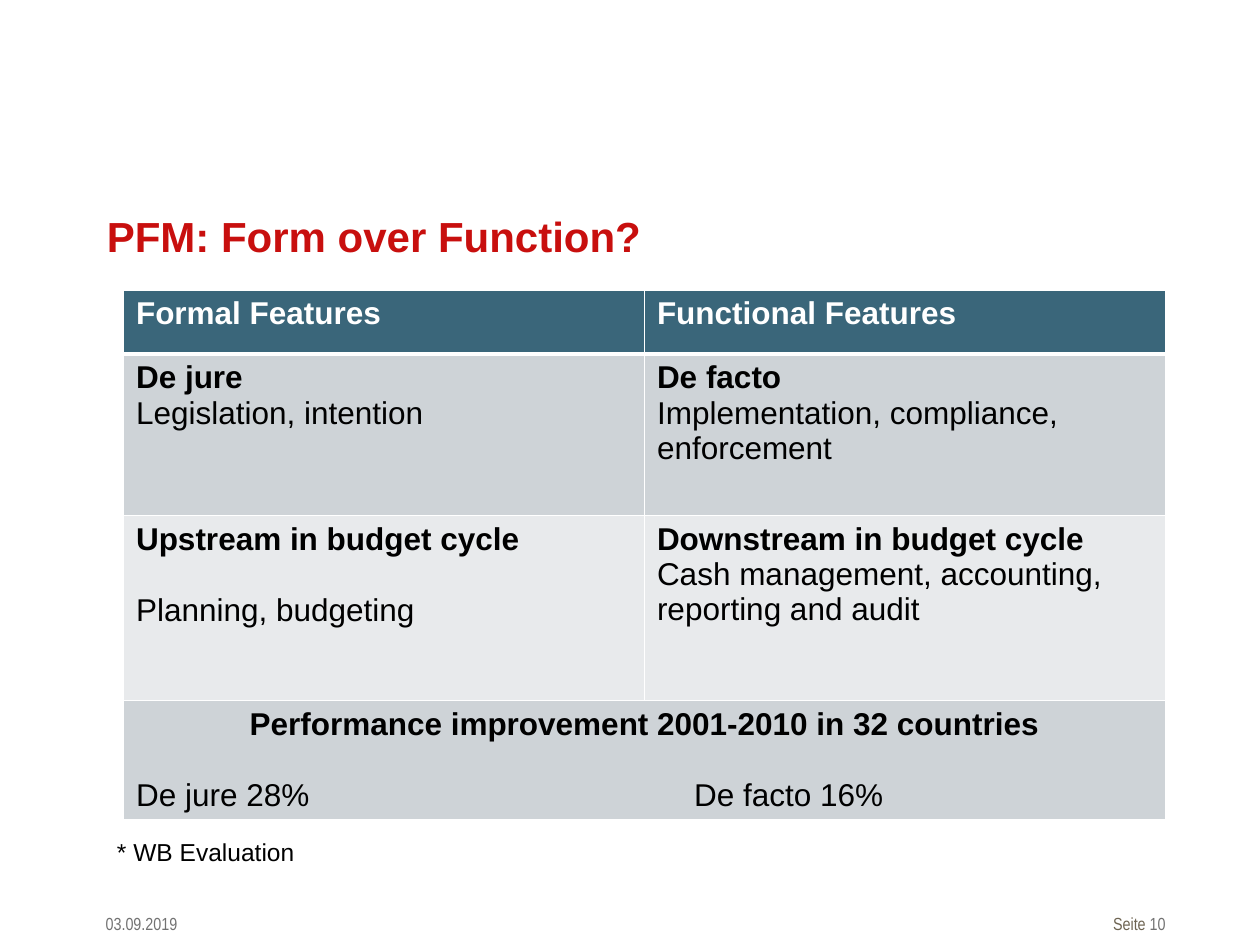
from pptx import Presentation
from pptx.util import Inches, Pt
from pptx.dml.color import RGBColor
from pptx.enum.text import PP_ALIGN as Align
from pptx.oxml import parse_xml
from pptx.oxml.ns import nsdecls

# Content: each cell is a list of (text, bold, space before in points)
HEAD, DARK, PALE = "3A667A", "CED3D7", "E8EAEC"
WHITE, BLACK, GREY = "FFFFFF", "000000", "727272"
GAP = 20.7  # one line of 18 pt text
ROWS = [
    (0.51, HEAD, WHITE, [
        [("Formal Features", True, 0)],
        [("Functional Features", True, 0)]]),
    (1.28, DARK, BLACK, [
        [("De jure", True, 0), ("Legislation, intention", False, 0)],
        [("De facto", True, 0),
         ("Implementation, compliance, enforcement", False, 0)]]),
    (1.47, PALE, BLACK, [
        [("Upstream in budget cycle", True, 0),
         ("Planning, budgeting", False, GAP)],
        [("Downstream in budget cycle", True, 0),
         ("Cash management, accounting, reporting and audit", False, 0)]]),
    (0.94, DARK, BLACK, [
        [("Performance improvement 2001-2010 in 32 countries", True, 0),
         ("De jure 28%\tDe facto 16%", False, GAP)]]),
]
# Text boxes: place, runs with colours, size, font, bold, alignment
BOXES = [
    ((0.75, 1.62, 8.5, 0.68), [("PFM: Form over Function?", "C80F0E")],
     24, "Arial", True, Align.LEFT),
    ((0.83, 6.59, 8.42, 0.68), [("* WB Evaluation", BLACK)],
     14, "Arial", False, Align.LEFT),
    ((0.74, 7.2, 1.42, 0.27), [("03.09.2019", GREY)],
     10, "Arial Narrow", False, Align.LEFT),
    ((8.24, 7.2, 1.01, 0.27), [("Seite ", "6E6452"), ("10", GREY)],
     10, "Arial Narrow", False, Align.RIGHT),
]


def color(code):
    return RGBColor.from_string(code)


def style(para, size, face, bold):
    font = para.font
    font.size, font.name, font.bold = Pt(size), face, bold


def add_box(slide, place, runs, size, face, bold, align):
    frame = slide.shapes.add_textbox(*map(Inches, place)).text_frame
    frame.word_wrap = True
    if align == Align.RIGHT:
        frame.margin_right = 0
    para = frame.paragraphs[0]
    para.alignment = align
    for text, code in runs:
        run = para.add_run()
        run.text = text
        run.font.color.rgb = color(code)
    style(para, size, face, bold)


def set_lines(cell, top, bottom):
    props = cell._tc.get_or_add_tcPr()
    sides = (("L", 1), ("R", 1), ("T", top), ("B", bottom))
    for i, (side, width) in enumerate(sides):
        props.insert(i, parse_xml(
            f'<a:ln{side} {nsdecls("a")} w="{Pt(width)}"><a:solidFill>'
            f'<a:srgbClr val="{WHITE}"/></a:solidFill></a:ln{side}>'))


def add_tab(para, pos):
    para._p.get_or_add_pPr().append(parse_xml(
        f'<a:tabLst {nsdecls("a")}><a:tab pos="{Inches(pos)}" algn="l"/>'
        '</a:tabLst>'))


def fill_cell(cell, lines, code):
    frame = cell.text_frame
    for i, (text, bold, gap) in enumerate(lines):
        para = frame.add_paragraph() if i else frame.paragraphs[0]
        if gap:
            para.space_before = Pt(gap)
        if "\t" in text:
            add_tab(para, 4.43)
        para.text = text
        style(para, 18, "Arial", bold)
        para.font.color.rgb = color(code)


def add_grid(slide):
    place = (0.98, 2.3, 8.27, sum(row[0] for row in ROWS))
    grid = slide.shapes.add_table(len(ROWS), 2, *map(Inches, place)).table
    for r, (height, back, ink, cells) in enumerate(ROWS):
        grid.rows[r].height = Inches(height)
        for c in range(2):
            cell = grid.cell(r, c)
            cell.fill.solid()
            cell.fill.fore_color.rgb = color(back)
            set_lines(cell, 3 if r == 1 else 1, 3 if r == 0 else 1)
        if len(cells) == 1:
            grid.cell(r, 0).merge(grid.cell(r, 1))
            lead = grid.cell(r, 0).text_frame.paragraphs[0]
            lead.alignment = Align.CENTER
        for c, lines in enumerate(cells):
            fill_cell(grid.cell(r, c), lines, ink)


def main():
    deck = Presentation()
    deck.slide_width, deck.slide_height = Inches(10), Inches(7.5)
    slide = deck.slides.add_slide(deck.slide_layouts[6])
    add_grid(slide)
    for box in BOXES:
        add_box(slide, *box)
    deck.save("out.pptx")


if __name__ == "__main__":
    main()
